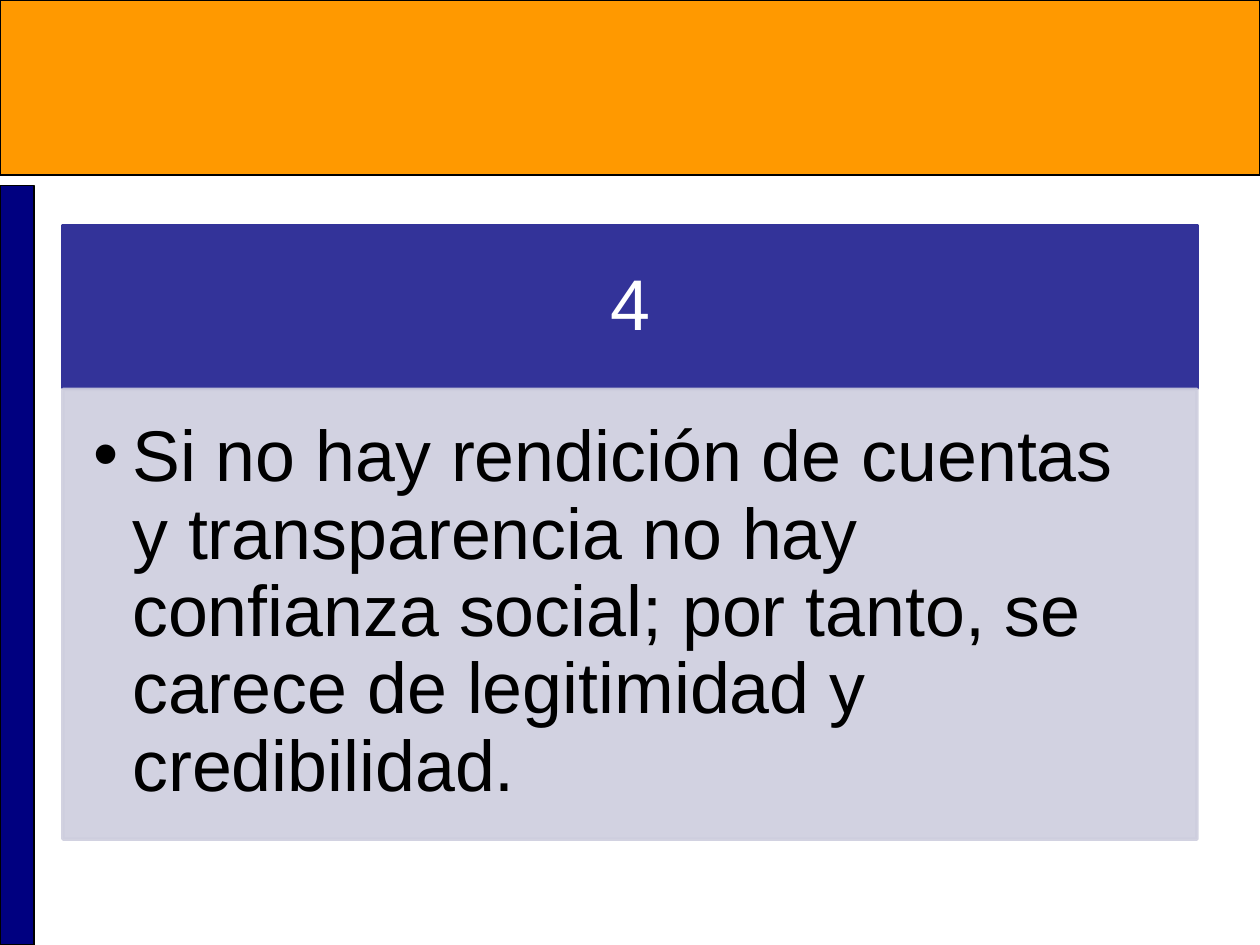
from lxml.etree import SubElement
from pptx import Presentation
from pptx.dml.color import RGBColor
from pptx.enum.shapes import MSO_SHAPE
from pptx.enum.text import MSO_ANCHOR, PP_ALIGN
from pptx.oxml.ns import qn
from pptx.util import Inches, Pt

ORANGE = RGBColor(0xFF, 0x99, 0x00)
NAVY = RGBColor(0x00, 0x00, 0x80)
INDIGO = RGBColor(0x33, 0x33, 0x99)
LAVENDER = RGBColor(0xCE, 0xCE, 0xDE)
BLACK = RGBColor(0x00, 0x00, 0x00)
WHITE = RGBColor(0xFF, 0xFF, 0xFF)


class SlideBuilder:
    font_name = "Arial"
    font_size = Pt(41)
    line_spacing = 0.9

    def __init__(self, slide):
        self.slide = slide

    def rectangle(self, left, top, width, height, fill, line, line_width, opacity=100):
        shape = self.slide.shapes.add_shape(
            MSO_SHAPE.RECTANGLE, Inches(left), Inches(top), Inches(width), Inches(height)
        )
        shape.shadow.inherit = False
        shape.fill.solid()
        shape.fill.fore_color.rgb = fill
        shape.line.color.rgb = line
        shape.line.width = Pt(line_width)
        if opacity < 100:
            for color in shape._element.spPr.iter(qn("a:srgbClr")):
                SubElement(color, qn("a:alpha"), val=str(opacity * 1000))
        return shape

    def text(self, shape, text, color, alignment, anchor, margins, bullet_indent=0):
        """Fill a shape with one paragraph; margins are left, top, right, bottom."""
        frame = shape.text_frame
        frame.word_wrap = True
        frame.vertical_anchor = anchor
        (frame.margin_left, frame.margin_top,
         frame.margin_right, frame.margin_bottom) = map(Inches, margins)
        paragraph = frame.paragraphs[0]
        paragraph.alignment = alignment
        paragraph.line_spacing = self.line_spacing
        if bullet_indent:
            self.bullet(paragraph, bullet_indent)
        run = paragraph.add_run()
        run.text = text
        run.font.name = self.font_name
        run.font.size = self.font_size
        run.font.color.rgb = color

    def bullet(self, paragraph, indent):
        properties = paragraph._p.get_or_add_pPr()
        properties.set("marL", str(Inches(indent)))
        properties.set("indent", str(-Inches(indent)))
        SubElement(properties, qn("a:buFont"), typeface=self.font_name)
        SubElement(properties, qn("a:buChar"), char="•")


def main():
    presentation = Presentation()
    presentation.slide_width = Inches(10)
    presentation.slide_height = Inches(7.5)
    builder = SlideBuilder(presentation.slides.add_slide(presentation.slide_layouts[6]))

    builder.rectangle(0, 0, 10, 1.39, ORANGE, BLACK, 0.75)
    builder.rectangle(0, 1.47, 0.27, 6.03, NAVY, BLACK, 0.75)

    header = builder.rectangle(0.5, 1.79, 9, 1.29, INDIGO, INDIGO, 2)
    builder.text(header, "4", WHITE, PP_ALIGN.CENTER, MSO_ANCHOR.MIDDLE,
                 (0.32, 0.18, 0.32, 0.18))

    body = builder.rectangle(0.5, 3.09, 9, 3.57, LAVENDER, LAVENDER, 2, opacity=90)
    builder.text(
        body,
        "Si no hay rendición de cuentas y transparencia no hay confianza social; "
        "por tanto, se carece de legitimidad y credibilidad.",
        BLACK, PP_ALIGN.LEFT, MSO_ANCHOR.TOP, (0.24, 0.24, 0.32, 0.36),
        bullet_indent=0.31,
    )

    presentation.save("out.pptx")


if __name__ == "__main__":
    main()
